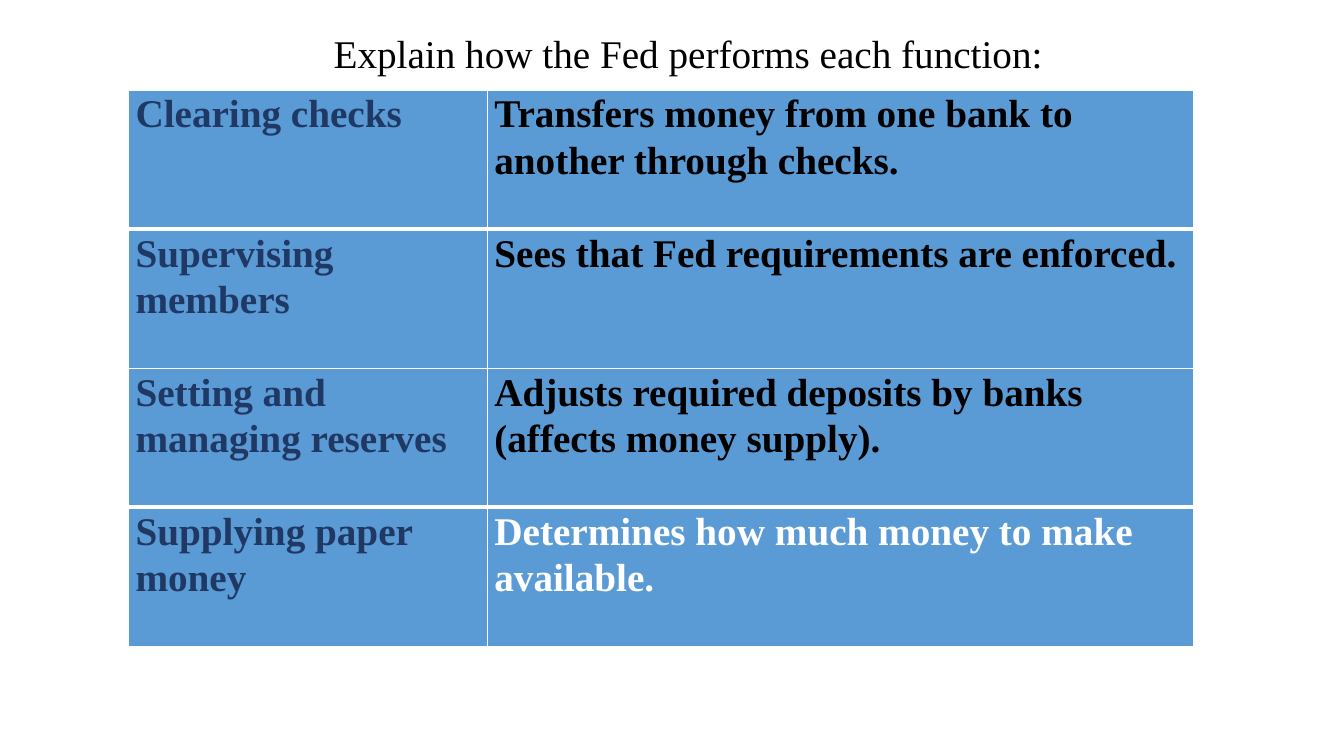
import dataclasses

import pptx
import pptx.dml.color
import pptx.enum.text
import pptx.oxml
import pptx.oxml.ns
import pptx.util

COLORS = {"cell": "5B9BD5", "function": "203864", "dark": "000000", "light": "FFFFFF"}
FONT = {"name": "Times New Roman", "size": pptx.util.Pt(28)}
CELL_FORMAT = {
    "margin_left": pptx.util.Inches(0.07),
    "margin_right": pptx.util.Inches(0.07),
    "margin_top": 0,
    "margin_bottom": 0,
    "vertical_anchor": pptx.enum.text.MSO_ANCHOR.TOP,
}
THIN, THICK = 1, 3

# Table grid, in percent of the slide's width and height
LEFT, TOP = 9.56, 11.9
COLUMNS = (26.7, 52.55)
ROW = 18.4


@dataclasses.dataclass
class FedFunction:
    name: str
    explanation: str
    color: str = "dark"
    top: int = THIN
    bottom: int = THIN


FUNCTIONS = [
    FedFunction("Clearing checks",
                "Transfers money from one bank to another through checks.", bottom=THICK),
    FedFunction("Supervising members",
                "Sees that Fed requirements are enforced.", top=THICK),
    FedFunction("Setting and managing reserves",
                "Adjusts required deposits by banks (affects money supply).", bottom=THICK),
    FedFunction("Supplying paper money",
                "Determines how much money to make available.", color="light", top=THICK),
]

prs = pptx.Presentation()
prs.slide_width = pptx.util.Inches(13.33)
prs.slide_height = pptx.util.Inches(7.5)


def across(percent: float) -> int:
    return round(prs.slide_width * percent / 100)


def down(percent: float) -> int:
    return round(prs.slide_height * percent / 100)


def apply(target: object, values: dict) -> None:
    for key, value in values.items():
        setattr(target, key, value)


def write(tf, text: str, color: str, bold: bool, spacing: float):
    p = tf.paragraphs[0]
    apply(p, {"alignment": pptx.enum.text.PP_ALIGN.LEFT, "line_spacing": spacing})
    r = p.add_run()
    r.text = text
    apply(r.font, {**FONT, "bold": bold})
    r.font.color.rgb = pptx.dml.color.RGBColor.from_string(COLORS[color])


def add_borders(cell, top: int, bottom: int) -> None:
    tc_pr = cell._tc.get_or_add_tcPr()
    for side, width in {"L": THIN, "R": THIN, "T": top, "B": bottom}.items():
        tc_pr.append(pptx.oxml.parse_xml(
            f'<a:ln{side} {pptx.oxml.ns.nsdecls("a")} w="{pptx.util.Pt(width)}">'
            f'<a:solidFill><a:srgbClr val="{COLORS["light"]}"/></a:solidFill></a:ln{side}>'))


def draw_cell(cell, text: str, color: str, item: FedFunction) -> None:
    apply(cell, CELL_FORMAT)
    add_borders(cell, item.top, item.bottom)
    cell.fill.solid()
    cell.fill.fore_color.rgb = pptx.dml.color.RGBColor.from_string(COLORS["cell"])
    write(cell.text_frame, text, color, True, 1.07)


# Title
slide = prs.slides.add_slide(prs.slide_layouts[5])
sp = slide.shapes.title
apply(sp, {"left": across(24.08), "top": down(3.2),
           "width": across(54.84), "height": down(7.6)})
tf = sp.text_frame
apply(tf, {"word_wrap": False, "auto_size": pptx.enum.text.MSO_AUTO_SIZE.NONE,
           "vertical_anchor": pptx.enum.text.MSO_ANCHOR.TOP})
write(tf, "Explain how the Fed performs each function:", "dark", False, 1.0)

# Table of functions and explanations
table = slide.shapes.add_table(
    len(FUNCTIONS), len(COLUMNS), across(LEFT), down(TOP),
    across(sum(COLUMNS)), down(ROW * len(FUNCTIONS))).table
apply(table, {"first_row": False, "horz_banding": False})
for column, width in zip(table.columns, COLUMNS):
    column.width = across(width)
for row, item in zip(table.rows, FUNCTIONS):
    row.height = down(ROW)
    draw_cell(row.cells[0], item.name, "function", item)
    draw_cell(row.cells[1], item.explanation, item.color, item)

prs.save("out.pptx")
